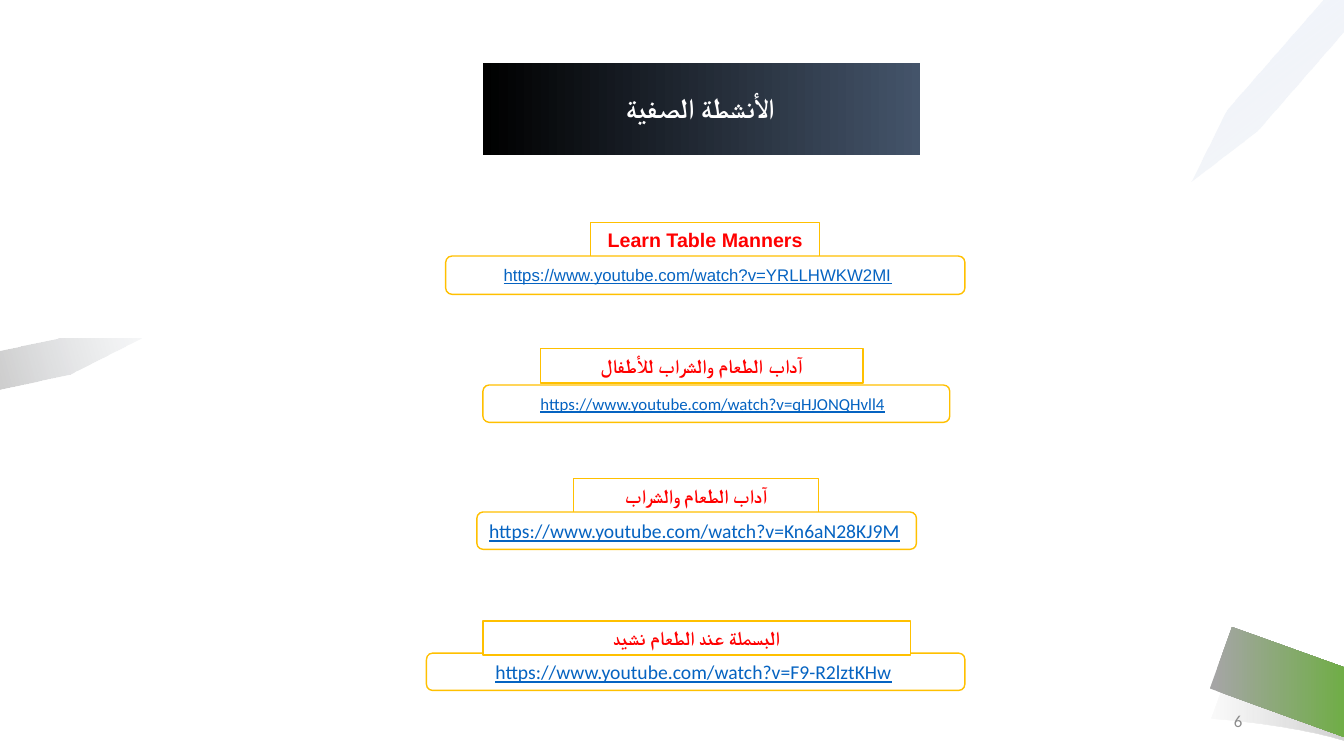
from lxml import etree
from pptx import Presentation
from pptx.dml.color import RGBColor
from pptx.enum.shapes import MSO_SHAPE as SHAPE
from pptx.enum.text import MSO_ANCHOR as ANCHOR, PP_ALIGN as ALIGN
from pptx.oxml.ns import qn
from pptx.util import Inches, Pt

WHITE = RGBColor(0xFF, 0xFF, 0xFF)
BLACK = RGBColor(0, 0, 0)
SLATE = RGBColor(0x44, 0x54, 0x6A)
GRAY = RGBColor(0xA5, 0xA5, 0xA5)
LIGHT_GRAY = RGBColor(0xE7, 0xE6, 0xE6)
NUMBER_GRAY = RGBColor(0x8C, 0x8C, 0x8C)
GREEN = RGBColor(0x70, 0xAD, 0x47)
BLUE = RGBColor(0x44, 0x72, 0xC4)
LINK_BLUE = RGBColor(0x05, 0x63, 0xC1)
GOLD = RGBColor(0xFF, 0xC0, 0x00)
RED = RGBColor(0xFF, 0, 0)

WATCH = "https://www.youtube.com/watch?v="


def curve(p0, p1, p2, p3, steps=12):
    """Points of a cubic curve, both ends included."""
    points = []
    for i in range(steps + 1):
        t = i / steps
        weights = ((1 - t) ** 3, 3 * t * (1 - t) ** 2, 3 * t ** 2 * (1 - t), t ** 3)
        points.append(tuple(sum(w * p[axis] for w, p in zip(weights, (p0, p1, p2, p3)))
                            for axis in (0, 1)))
    return points


def set_gradient(sp, angle, *stops):
    """Linear gradient; each stop is (position %, colour, opacity %)."""
    sp.fill.gradient()
    grad = sp._element.spPr.find(qn("a:gradFill"))
    for child in list(grad):
        grad.remove(child)
    stop_list = etree.SubElement(grad, qn("a:gsLst"))
    for position, color, opacity in stops:
        stop = etree.SubElement(stop_list, qn("a:gs"), pos=str(position * 1000))
        rgb = etree.SubElement(stop, qn("a:srgbClr"), val=str(color))
        if opacity < 100:
            etree.SubElement(rgb, qn("a:alpha"), val=str(opacity * 1000))
    etree.SubElement(grad, qn("a:lin"), ang=str(angle * 60000), scaled="0")


def add_ribbon(slide, points, angle, *stops):
    start, *rest = [(Inches(x), Inches(y)) for x, y in points]
    builder = slide.shapes.build_freeform(*start)
    builder.add_line_segments(rest, close=True)
    sp = builder.convert_to_shape()
    sp.shadow.inherit = False
    sp.line.fill.background()
    set_gradient(sp, angle, *stops)


def write(sp, text, size, font, color, bold=False, underline=False,
          align=ALIGN.CENTER, anchor=ANCHOR.MIDDLE, rtl=False):
    tf = sp.text_frame
    tf.word_wrap = True
    tf.vertical_anchor = anchor
    p = tf.paragraphs[0]
    p.alignment = align
    if rtl:
        p._p.get_or_add_pPr().set("rtl", "1")
    r = p.add_run()
    r.text = text
    r.font.size = Pt(size)
    r.font.name = font
    r.font.bold = bold
    r.font.underline = underline
    r.font.color.rgb = color
    etree.SubElement(r._r.get_or_add_rPr(), qn("a:cs"), typeface=font)
    return p


def add_box(slide, kind, x, y, w, h):
    sp = slide.shapes.add_shape(kind, Inches(x), Inches(y), Inches(w), Inches(h))
    sp.shadow.inherit = False
    sp.fill.solid()
    sp.fill.fore_color.rgb = WHITE
    sp.line.color.rgb = GOLD
    sp.line.width = Pt(1)
    return sp


def add_label(slide, x, y, w, text, font, rtl=True):
    sp = add_box(slide, SHAPE.RECTANGLE, x, y, w, 0.34)
    write(sp, text, 14, font, RED, bold=True, anchor=ANCHOR.TOP, rtl=rtl)


def add_link(slide, x, y, w, h, video, size, font, right_inset):
    sp = add_box(slide, SHAPE.ROUNDED_RECTANGLE, x, y, w, h)
    sp.text_frame.margin_right = Inches(right_inset)
    write(sp, WATCH + video, size, font, LINK_BLUE, underline=True)


def add_title(slide, text):
    sp = add_box(slide, SHAPE.RECTANGLE, 4.79, 0.63, 4.34, 0.91)
    sp.line.fill.background()
    set_gradient(sp, 180, (0, SLATE, 100), (100, BLACK, 100))
    sp.text_frame.margin_left = Inches(0.16)
    sp.text_frame.margin_right = Inches(0.19)
    p = write(sp, text, 20, "Calibri", WHITE, bold=True, rtl=True)
    p.line_spacing = 0.9


def add_slide_number(slide, number):
    sp = slide.shapes.add_textbox(Inches(9.42), Inches(6.95), Inches(3), Inches(0.4))
    write(sp, number, 12, "Calibri", NUMBER_GRAY, align=ALIGN.RIGHT)


def add_decoration(slide):
    # Bottom right: curved shade under the green ribbon
    shade = (curve((12.02, 7.13), (12.02, 7.13), (12.78, 7.18), (13.33, 7.35))
             + curve((13.33, 6.68), (12.72, 6.51), (12.24, 6.52), (12.24, 6.52)))
    add_ribbon(slide, shade, 0, (3, GRAY, 6), (100, GRAY, 50))
    add_ribbon(slide, [(13.33, 6.62), (12.22, 6.22), (12, 6.83), (13.33, 7.31)],
               0, (3, GRAY, 100), (100, GREEN, 100))
    # Left edge
    add_ribbon(slide, [(1.4, 3.36), (0.58, 3.36), (0, 3.48), (0, 3.86), (0.7, 3.71)],
               164, (0, SLATE, 5), (100, BLACK, 20))
    # Top right
    add_ribbon(slide, [(13.12, 0), (12.17, 1.09), (11.82, 1.8), (12.47, 1.3),
                       (13.33, 0.31), (13.33, 0)],
               53, (0, BLUE, 5), (100, LIGHT_GRAY, 20))


def main():
    prs = Presentation()
    prs.slide_width, prs.slide_height = Inches(13.33), Inches(7.5)
    slide = prs.slides.add_slide(prs.slide_layouts[6])

    add_decoration(slide)
    add_title(slide, "الأنشطة الصفية")
    add_slide_number(slide, "6")

    # Activities: a label above each video link
    add_label(slide, 5.86, 2.21, 2.27, "Learn Table Manners", "Arial", rtl=False)
    add_link(slide, 4.42, 2.54, 5.15, 0.38, "YRLLHWKW2MI", 12, "Arial", 0.25)
    add_label(slide, 5.36, 3.46, 3.2, "آداب الطعام والشراب للأطفال", "Arial")
    add_link(slide, 4.79, 3.82, 4.63, 0.37, "qHJONQHvll4", 12, "Calibri", 0.17)
    add_label(slide, 5.69, 4.75, 2.43, "آداب الطعام والشراب", "Calibri")
    add_link(slide, 4.73, 5.08, 4.36, 0.37, "Kn6aN28KJ9M", 14, "Calibri", 0.14)
    # The last label lies over its link
    add_link(slide, 4.23, 6.48, 5.34, 0.37, "F9-R2lztKHw", 14, "Calibri", 0.14)
    add_label(slide, 4.79, 6.16, 4.24, "البسملة عند الطعام نشيد", "Calibri")

    prs.save("out.pptx")


if __name__ == "__main__":
    main()
